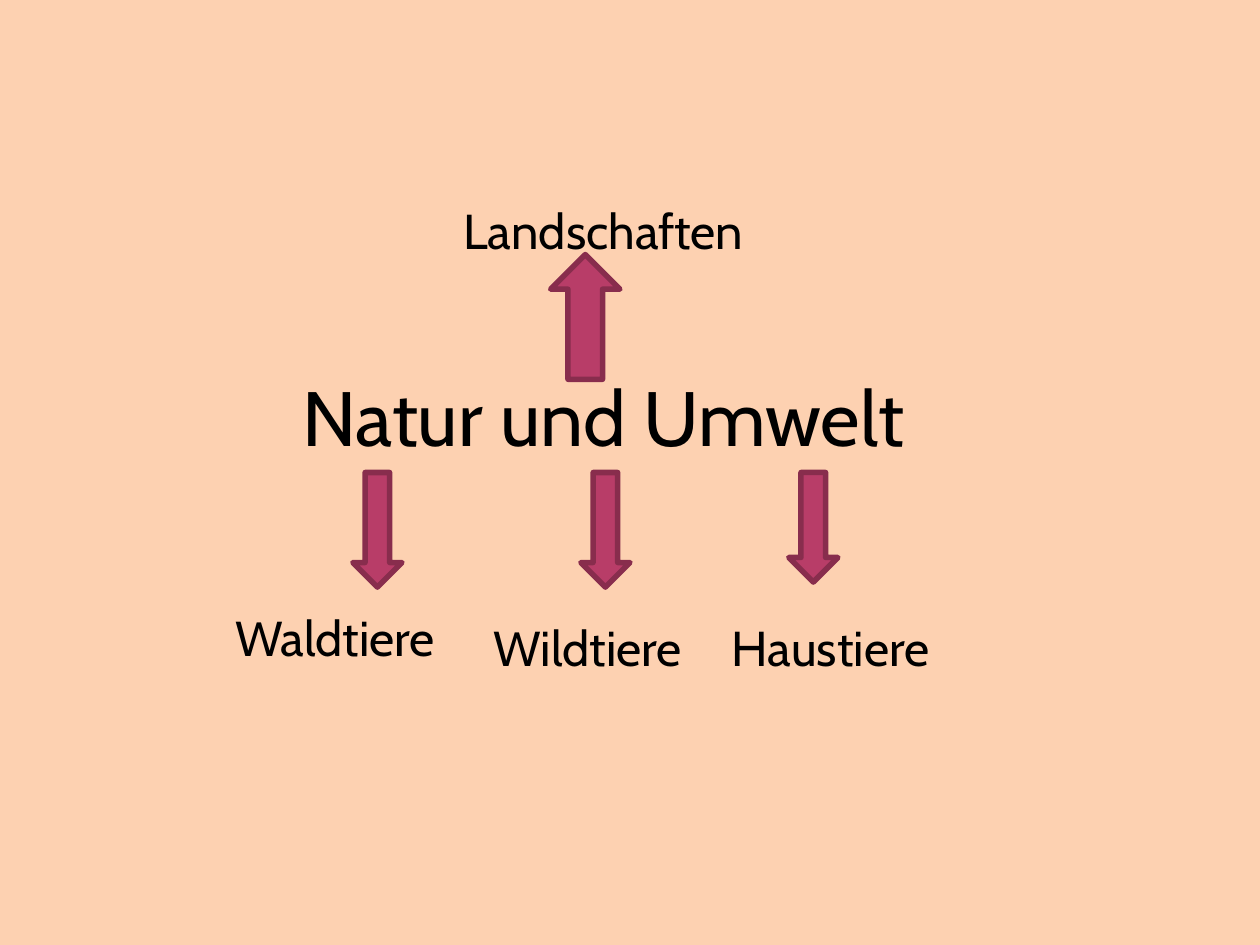
from dataclasses import dataclass

from pptx import Presentation
from pptx.dml.color import RGBColor
from pptx.enum.shapes import MSO_SHAPE as Shape
from pptx.enum.text import MSO_ANCHOR as Anchor, MSO_AUTO_SIZE as AutoSize, PP_ALIGN as Align
from pptx.util import Inches, Pt


@dataclass(frozen=True)
class Theme:
    background: RGBColor = RGBColor.from_string("FDD1B1")
    text: RGBColor = RGBColor.from_string("000000")
    arrow_fill: RGBColor = RGBColor.from_string("B83D68")
    arrow_line: RGBColor = RGBColor.from_string("882D4D")
    font: str = "Cabin"
    topic_size: int = 44
    branch_size: int = 28
    arrow_line_width: float = 3.15


THEME = Theme()


def write(frame, text, size, anchor=Anchor.TOP, indent=0.1):
    frame.word_wrap = True
    frame.auto_size = AutoSize.NONE
    frame.vertical_anchor = anchor
    frame.margin_left, frame.margin_right = Inches(indent), Inches(0.1)
    frame.margin_top = frame.margin_bottom = Inches(0.05)
    paragraph = frame.paragraphs[0]
    paragraph.alignment = Align.LEFT
    paragraph.line_spacing = 1.0
    paragraph.space_before = Pt(0)
    run = paragraph.add_run()
    run.text = text
    run.font.name = THEME.font
    run.font.size = Pt(size)
    run.font.color.rgb = THEME.text


def set_topic(slide, text, left, top, width, height, indent):
    topic = slide.shapes.title
    topic.left, topic.top = Inches(left), Inches(top)
    topic.width, topic.height = Inches(width), Inches(height)
    write(topic.text_frame, text, THEME.topic_size, indent=indent)


def add_branch(slide, text, left, top, width, height=0.57, anchor=Anchor.TOP):
    branch = slide.shapes.add_textbox(Inches(left), Inches(top), Inches(width), Inches(height))
    write(branch.text_frame, text, THEME.branch_size, anchor)


def add_arrow(slide, direction, left, top, width, height):
    arrow = slide.shapes.add_shape(
        direction, Inches(left), Inches(top), Inches(width), Inches(height))
    arrow.shadow.inherit = False
    arrow.fill.solid()
    arrow.fill.fore_color.rgb = THEME.arrow_fill
    arrow.line.color.rgb = THEME.arrow_line
    arrow.line.width = Pt(THEME.arrow_line_width)


def main():
    deck = Presentation()
    deck.slide_width, deck.slide_height = Inches(10), Inches(7.5)
    slide = deck.slides.add_slide(deck.slide_layouts[5])
    slide.background.fill.solid()
    slide.background.fill.fore_color.rgb = THEME.background

    # Central topic
    set_topic(slide, "Natur und Umwelt", 0.83, 2.88, 7.72, 3.06, indent=1.57)

    # Upper branch
    add_arrow(slide, Shape.UP_ARROW, 4.37, 2.02, 0.55, 0.99)
    add_branch(slide, "Landschaften", 3.58, 1.07, 2.68, 1.04, Anchor.BOTTOM)

    # Lower branches: arrow left and height, then label, left, top and width
    animals = [
        (2.80, 0.91, "Waldtiere", 1.77, 4.77, 2.05),
        (4.61, 0.91, "Wildtiere", 3.82, 4.85, 1.89),
        (6.26, 0.87, "Haustiere", 5.71, 4.85, 2.05),
    ]
    for arrow_left, arrow_height, label, left, top, width in animals:
        add_arrow(slide, Shape.DOWN_ARROW, arrow_left, 3.75, 0.39, arrow_height)
        add_branch(slide, label, left, top, width)

    deck.save("out.pptx")


if __name__ == "__main__":
    main()
